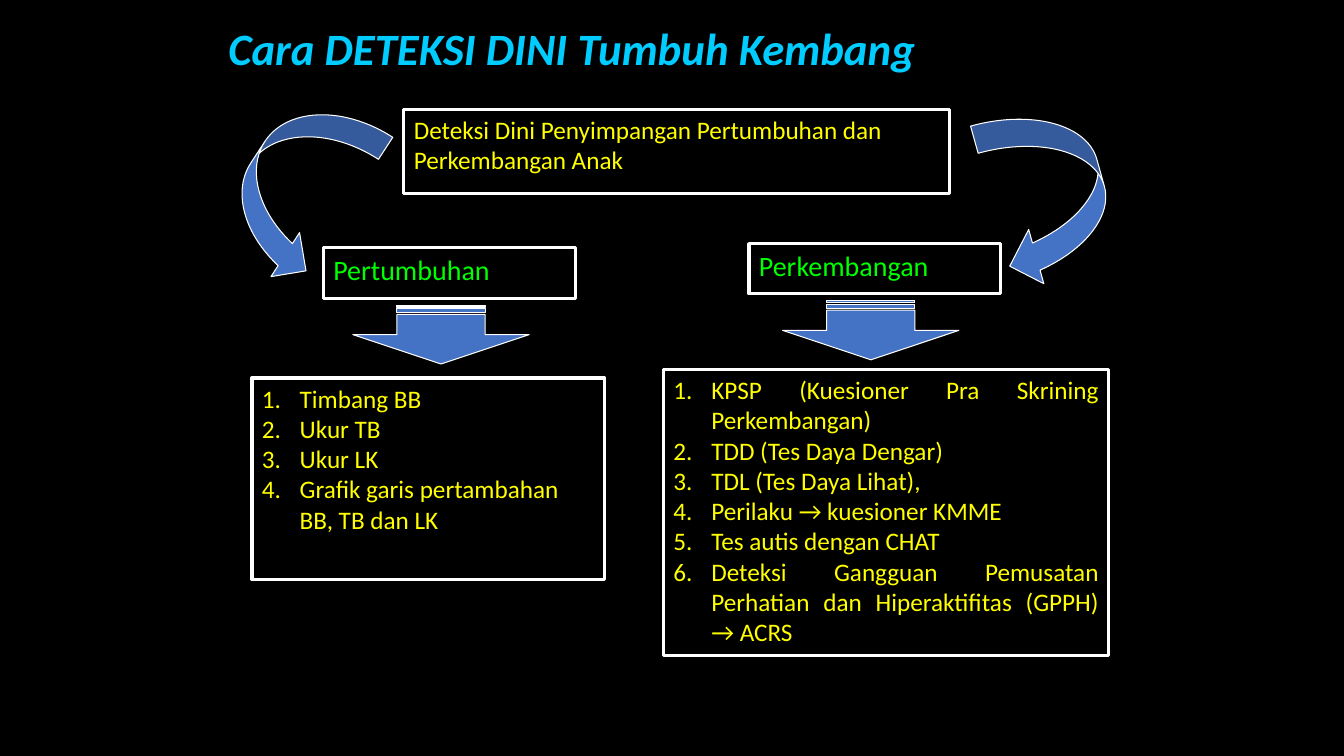
from lxml import etree
from pptx import Presentation
from pptx import util as u
from pptx.dml.color import RGBColor
from pptx.enum import shapes, text
from pptx.oxml.ns import qn

COLORS = {
    "background": "000000",
    "title": "00CCFF",
    "body": "FFFF00",
    "heading": "00FF00",
    "arrow": "4472C4",
    "line": "FFFFFF",
}
FONT = "Calibri"
INDENT = 27
HEADING_SIZE = (180, 36)
ARROW_SIZE = (42, 126)
ARROW_CENTRE_DROP = 62

GROWTH = ["Timbang BB", "Ukur TB", "Ukur LK", "Grafik garis pertambahan BB, TB dan LK"]
DEVELOPMENT = [
    "KPSP (Kuesioner Pra Skrining Perkembangan)",
    "TDD (Tes Daya Dengar)",
    "TDL (Tes Daya Lihat),",
    "Perilaku → kuesioner KMME",
    "Tes autis dengan CHAT",
    "Deteksi Gangguan Pemusatan Perhatian dan Hiperaktifitas (GPPH) → ACRS",
]


def color(name):
    """Return the named colour."""
    return RGBColor.from_string(COLORS[name])


def format_runs(paragraph, size, color_name, emphasis=False):
    """Give every run of a paragraph its font."""
    for run in paragraph.runs:
        run.font.name = FONT
        run.font.size = u.Pt(size)
        run.font.bold = run.font.italic = emphasis
        run.font.color.rgb = color(color_name)


def add_title(slide, box, words):
    """Write the slide title, centred vertically in its box."""
    shape = slide.shapes.add_textbox(*map(u.Pt, box))
    frame = shape.text_frame
    frame.word_wrap = True
    frame.vertical_anchor = text.MSO_ANCHOR.MIDDLE
    frame.text = words
    frame.paragraphs[0].line_spacing = 0.8
    format_runs(frame.paragraphs[0], 32, "title", emphasis=True)


def add_frame(slide, box, lines, size, color_name, align=text.PP_ALIGN.LEFT):
    """Draw an outlined box holding one paragraph per line."""
    shape = slide.shapes.add_shape(shapes.MSO_SHAPE.RECTANGLE, *map(u.Pt, box))
    shape.shadow.inherit = False
    shape.fill.background()
    shape.line.color.rgb = color("line")
    shape.line.width = u.Pt(2.25)
    frame = shape.text_frame
    frame.word_wrap = True
    frame.vertical_anchor = text.MSO_ANCHOR.TOP
    frame.text = "\n".join(lines)
    for paragraph in frame.paragraphs:
        paragraph.alignment = align
        format_runs(paragraph, size, color_name)
    return shape


def number_paragraphs(shape):
    """Number the paragraphs of a shape with a hanging indent."""
    for paragraph in shape.text_frame.paragraphs:
        properties = paragraph._p.get_or_add_pPr()
        properties.set("marL", str(u.Pt(INDENT)))
        properties.set("indent", str(-u.Pt(INDENT)))
        etree.SubElement(properties, qn("a:buFont"), typeface="+mj-lt")
        etree.SubElement(properties, qn("a:buAutoNum"), type="arabicPeriod")


def add_arrow(slide, kind, box, rotation):
    """Draw a filled block arrow turned by the given angle."""
    shape = slide.shapes.add_shape(kind, *map(u.Pt, box))
    shape.shadow.inherit = False
    shape.rotation = rotation
    shape.fill.solid()
    shape.fill.fore_color.rgb = color("arrow")
    shape.line.color.rgb = color("line")
    shape.line.width = u.Pt(0.75)


def add_branch(slide, box, heading, items, heading_inset, arrow_inset, list_drop, align):
    """Stack a heading, a down arrow and a numbered list in a box."""
    left, top, width, height = box
    add_frame(slide, (left + heading_inset, top, *HEADING_SIZE), [heading], 20, "heading")
    arrow_width, arrow_height = ARROW_SIZE
    arrow_box = (
        left + arrow_inset - arrow_width / 2,
        top + ARROW_CENTRE_DROP - arrow_height / 2,
        arrow_width,
        arrow_height,
    )
    add_arrow(slide, shapes.MSO_SHAPE.STRIPED_RIGHT_ARROW, arrow_box, 90)
    list_box = (left, top + list_drop, width, height - list_drop)
    number_paragraphs(add_frame(slide, list_box, items, 18, "body", align))


def main():
    """Build and save the slide."""
    presentation = Presentation()
    presentation.slide_width = u.Pt(960)
    presentation.slide_height = u.Pt(540)
    slide = presentation.slides.add_slide(presentation.slide_layouts[6])
    slide.background.fill.solid()
    slide.background.fill.fore_color.rgb = color("background")

    add_title(slide, (156, 6, 660, 62.5), "Cara DETEKSI DINI Tumbuh Kembang")
    topic = "Deteksi Dini Penyimpangan Pertumbuhan dan Perkembangan Anak"
    add_frame(slide, (288.5, 78, 390, 60), [topic], 18, "body")
    add_branch(slide, (180, 177, 252, 237), "Pertumbuhan", GROWTH,
               51, 135, 93, text.PP_ALIGN.LEFT)
    add_branch(slide, (474, 174, 318, 294), "Perkembangan", DEVELOPMENT,
               61, 148, 90, text.PP_ALIGN.JUSTIFY)
    add_arrow(slide, shapes.MSO_SHAPE.CURVED_RIGHT_ARROW, (175.5, 67, 75, 132.5), 33)
    add_arrow(slide, shapes.MSO_SHAPE.CURVED_LEFT_ARROW, (708.5, 77, 80.5, 124), 344.4)
    presentation.save("out.pptx")


if __name__ == "__main__":
    main()
